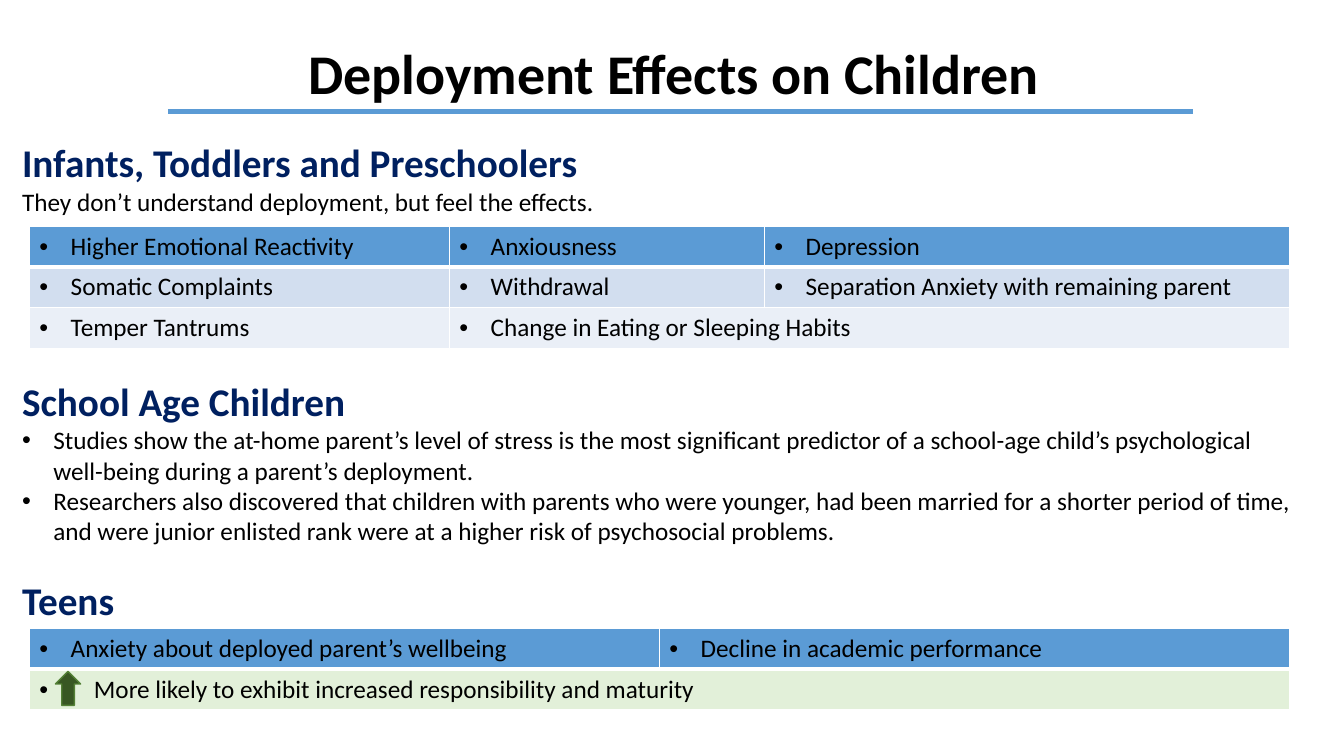
"""Build the slide on deployment effects on children."""
import pptx
import pptx.util
import pptx.dml.color
import pptx.enum.shapes
import pptx.enum.text
import lxml.etree

Inches, Pt = pptx.util.Inches, pptx.util.Pt
RGBColor = pptx.dml.color.RGBColor
BLACK = RGBColor(0x00, 0x00, 0x00)
WHITE = RGBColor(0xFF, 0xFF, 0xFF)
NAVY = RGBColor(0x00, 0x20, 0x60)
BLUE = RGBColor(0x5B, 0x9B, 0xD5)
PALE = RGBColor(0xD2, 0xDE, 0xEF)
MIST = RGBColor(0xEA, 0xEF, 0xF7)
MINT = RGBColor(0xE2, 0xF0, 0xD9)
LEAF = RGBColor(0x38, 0x57, 0x23)
EDGE = RGBColor(0x53, 0x80, 0x35)

deck = pptx.Presentation()
deck.slide_width, deck.slide_height = Inches(13.33), Inches(7.5)
COL = deck.slide_width / 32
ROW = deck.slide_height * 0.054
TALL = deck.slide_height
slide = deck.slides.add_slide(deck.slide_layouts[5])
shapes = slide.shapes


def add(parent, tag, **attrs):
    """Append a drawing element and return it."""
    name = pptx.oxml.ns.qn("a:" + tag)
    return lxml.etree.SubElement(parent, name, **attrs)


def write(para, text, size=18, color=BLACK, bold=False, dent=0):
    """Fill a paragraph, with a bullet when it has an indent."""
    para.text = text
    if dent:
        props = para._p.get_or_add_pPr()
        props.set("marL", str(Inches(dent)))
        props.set("indent", str(-Inches(dent)))
        add(props, "buFont", typeface="Arial")
        add(props, "buChar", char="•")
    font = para.font
    font.name, font.size, font.bold = "Calibri", Pt(size), bold
    font.color.rgb = color


title = shapes.title
title.left, title.top = int(COL * 3.84), int(TALL * 0.044)
title.width, title.height = int(COL * 24.4), int(TALL * 0.103)
title.text_frame.vertical_anchor = pptx.enum.text.MSO_ANCHOR.TOP
head = title.text_frame.paragraphs[0]
write(head, "Deployment Effects on Children", 40, bold=True)
head.alignment = pptx.enum.text.PP_ALIGN.CENTER
head.line_spacing = 1.0

rule = shapes.add_connector(
    pptx.enum.shapes.MSO_CONNECTOR.STRAIGHT,
    int(COL * 4), int(TALL * 0.147), int(COL * 28.4), int(TALL * 0.147))
rule.line.color.rgb, rule.line.width = BLUE, Pt(3.5)
add(rule._element.spPr, "effectLst")

parts = [
    (0.177, 0.12, "Infants, Toddlers and Preschoolers", 0,
     ["They don’t understand deployment, but feel the effects."]),
    (0.493, 0.24, "School Age Children", 0.31,
     ["Studies show the at-home parent’s level of stress is the most "
      "significant predictor of a school-age child’s psychological "
      "well-being during a parent’s deployment.",
      "Researchers also discovered that children with parents who were "
      "younger, had been married for a shorter period of time, and were "
      "junior enlisted rank were at a higher risk of psychosocial problems."]),
    (0.756, 0.075, "Teens", 0, []),
]
for top, height, name, dent, lines in parts:
    box = shapes.add_textbox(int(COL * 0.29), int(TALL * top),
                             int(COL * 31), int(TALL * height))
    frame = box.text_frame
    frame.word_wrap = True
    write(frame.paragraphs[0], name, 28, NAVY, True)
    for line in lines:
        write(frame.add_paragraph(), line, dent=dent)

grids = [
    (0.299, [10, 7.5, 12.5], [BLUE, PALE, MIST],
     [["Higher Emotional Reactivity", "Anxiousness", "Depression"],
      ["Somatic Complaints", "Withdrawal",
       "Separation Anxiety with remaining parent"],
      ["Temper Tantrums", "Change in Eating or Sleeping Habits"]]),
    (0.831, [15, 15], [BLUE, MINT],
     [["Anxiety about deployed parent’s wellbeing",
       "Decline in academic performance"],
      ["More likely to exhibit increased responsibility and maturity"]]),
]
for top, cols, fills, rows in grids:
    table = shapes.add_table(
        len(rows), len(cols), int(COL * 0.7), int(TALL * top),
        int(COL * sum(cols)), int(ROW * len(rows))).table
    table.first_row = table.horz_banding = False
    for col, wide in zip(table.columns, cols):
        col.width = int(COL * wide)
    for r, (fill, texts) in enumerate(zip(fills, rows)):
        table.rows[r].height = int(ROW)
        for c in range(len(cols)):
            cell = table.cell(r, c)
            props = cell._tc.get_or_add_tcPr()
            for side in "LRTB":
                thick = (r, side) in [(0, "B"), (1, "T")]
                line = add(props, "ln" + side, w=str(Pt(3 if thick else 1)))
                add(add(line, "solidFill"), "srgbClr", val=str(WHITE))
            cell.fill.solid()
            cell.fill.fore_color.rgb = fill
        for c, text in enumerate(texts):
            dent = 0.54 if fill == MINT else 0.31
            write(table.cell(r, c).text_frame.paragraphs[0], text, dent=dent)
        if len(texts) < len(cols):
            table.cell(r, len(texts) - 1).merge(table.cell(r, len(cols) - 1))

arrow = shapes.add_shape(
    pptx.enum.shapes.MSO_SHAPE.DOWN_ARROW, int(COL * 1.32),
    int(TALL * 0.888), int(COL * 0.6), int(TALL * 0.045))
arrow.rotation = 180
arrow.shadow.inherit = False
arrow.fill.solid()
arrow.fill.fore_color.rgb = LEAF
arrow.line.color.rgb, arrow.line.width = EDGE, Pt(1)

deck.save("out.pptx")
